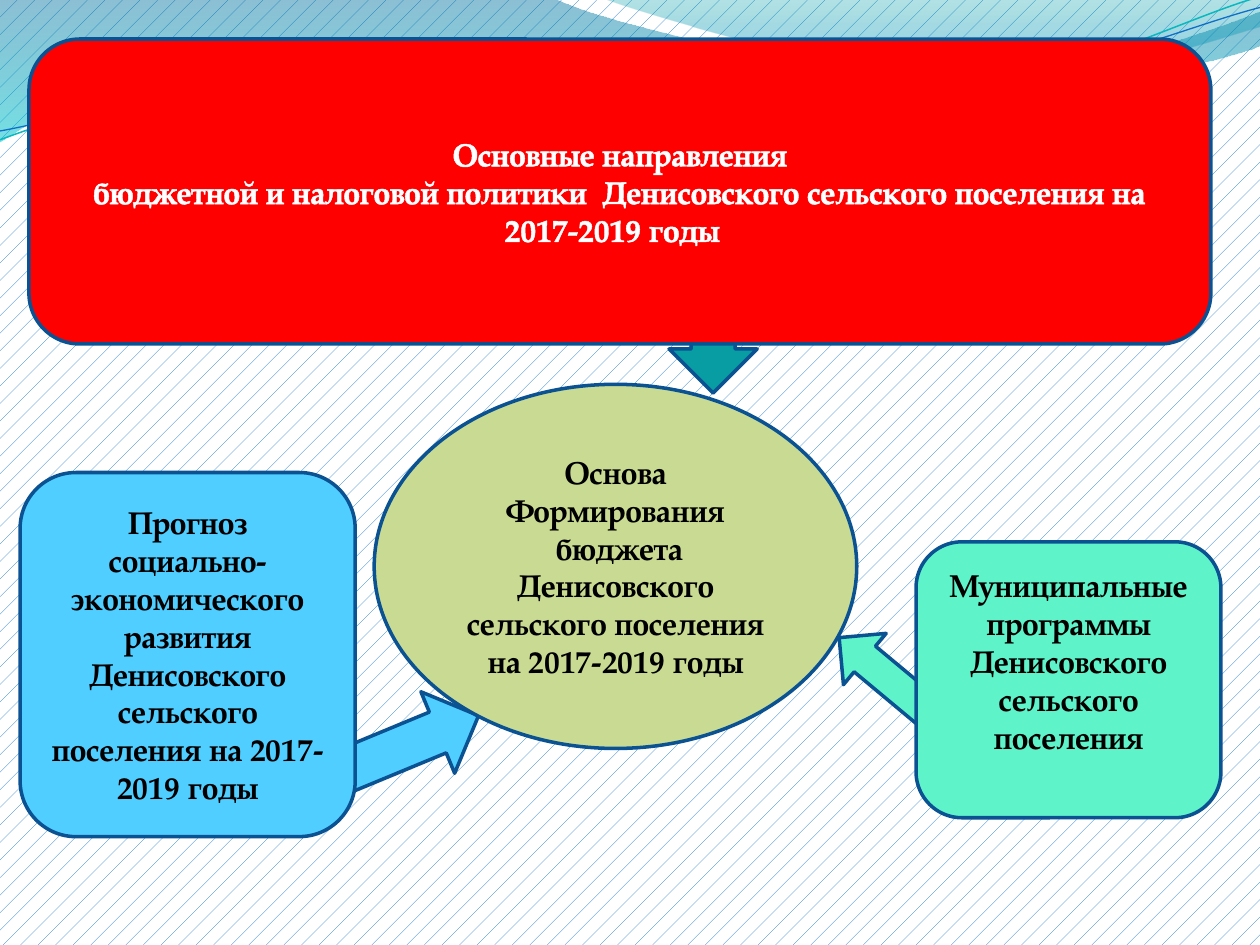
from math import cos, radians, sin

from lxml import etree
from pptx import Presentation
from pptx.dml.color import RGBColor
from pptx.enum.dml import MSO_PATTERN
from pptx.enum.shapes import MSO_SHAPE as SHAPE
from pptx.enum.text import MSO_ANCHOR, PP_ALIGN
from pptx.oxml.ns import qn
from pptx.util import Inches, Pt

FONT = "TeX Gyre Pagella"
TILT = 357.3
WHITE = RGBColor(0xFF, 0xFF, 0xFF)
BLACK = RGBColor(0, 0, 0)
RED = RGBColor(0xFF, 0, 0)
BLUE = RGBColor(0x0F, 0x6F, 0xC6)
NAVY = RGBColor(0x0B, 0x52, 0x92)
SKY = RGBColor(0x4F, 0xCE, 0xFF)
MINT = RGBColor(0x5F, 0xF3, 0xCA)
OLIVE = RGBColor(0xC9, 0xDA, 0x92)
TEAL = RGBColor(0x08, 0x9C, 0xA3)
AQUA = RGBColor(0x0A, 0xB8, 0xBF)
WAVE_TOP = RGBColor(0, 0x74, 0xA1)
WAVE_END = RGBColor(0, 0xC6, 0xCF)
CREST_TOP = RGBColor(0, 0xA1, 0xA9)
CREST_END = RGBColor(0, 0x8B, 0xBF)
EDGE_BLUE = RGBColor(0x06, 0x69, 0xC4)
EDGE_TEAL = RGBColor(0, 0x63, 0x7F)
EDGE_WHITE = RGBColor(0xFC, 0xFC, 0xFE)


def turn(point, angle):
    """Return a point turned clockwise about the origin."""
    (x, y), a = point, radians(angle)
    return x * cos(a) - y * sin(a), x * sin(a) + y * cos(a)


def level(points, angle):
    """Return points that look unchanged once their shape is rotated by the angle."""
    flat = [turn(pt, -angle) for pt in points]
    middle = [(min(axis) + max(axis)) / 2 for axis in zip(*flat)]
    dx, dy = (a - b for a, b in zip(turn(middle, angle), middle))
    return [(x + dx, y + dy) for x, y in flat]


class Deck:
    """Draws styled elements on a grid of 100 columns by 75 rows."""

    def __init__(self):
        self.prs = Presentation()
        self.prs.slide_width, self.prs.slide_height = Inches(10), Inches(7.5)
        self.s = self.prs.slides.add_slide(self.prs.slide_layouts[6])

    def emu(self, units):
        return round(units * self.prs.slide_width / 100)

    def background(self, fore, back):
        fill = self.s.background.fill
        fill.patterned()
        fill.pattern = MSO_PATTERN.PERCENT_5
        fill.fore_color.rgb, fill.back_color.rgb = fore, back

    def outline(self, parts, close):
        points = [pt for part in parts for pt in part]
        pts = [(self.emu(x), self.emu(y)) for x, y in points]
        builder = self.s.shapes.build_freeform(*pts[0], scale=1.0)
        builder.add_line_segments(pts[1:], close=close)
        sp = builder.convert_to_shape()
        sp.shadow.inherit = False
        segments = iter(list(sp._element.iter(qn("a:lnTo"))))
        for part in parts[1:]:
            steps = [next(segments) for _ in part]
            if len(part) > 1:
                curves = [steps[i:i + 3] for i in range(0, len(steps), 3)]
                for curve in curves:
                    cubic = etree.Element(qn("a:cubicBezTo"))
                    curve[0].addprevious(cubic)
                    for step in curve:
                        cubic.append(step[0])
                        step.getparent().remove(step)
        return sp

    def wave(self, parts, stops):
        sp = self.outline(parts, True)
        sp.line.fill.background()
        sp.fill.gradient()
        sp.fill.gradient_angle = 270
        for stop, (position, color, alpha) in zip(sp.fill.gradient_stops, stops):
            stop.position, stop.color.rgb = position, color
        colors = sp._element.spPr.iter(qn("a:srgbClr"))
        for clr, (_, _, alpha) in zip(colors, stops):
            etree.SubElement(clr, qn("a:alpha"), val=str(alpha * 1000))

    def ripple(self, points, color, width):
        flat = level(points, TILT)
        sp = self.outline([flat[:1], flat[1:]], False)
        sp.rotation = TILT
        sp.fill.background()
        sp.line.color.rgb, sp.line.width = color, Pt(width)

    def shape(self, kind, x, y, w, h, fill, rotation=0):
        sp = self.s.shapes.add_shape(kind, *map(self.emu, (x, y, w, h)))
        sp.shadow.inherit = False
        sp.rotation = rotation
        sp.fill.solid()
        sp.fill.fore_color.rgb = fill
        sp.line.color.rgb, sp.line.width = NAVY, Pt(2)
        return sp

    def box(self, kind, x, y, w, h, fill, lines, color=BLACK, edge=(EDGE_BLUE, 0.83), lift=0):
        tf = self.shape(kind, x, y, w, h, fill).text_frame
        tf.word_wrap = True
        tf.vertical_anchor = MSO_ANCHOR.MIDDLE
        tf.margin_bottom += self.emu(lift)
        tf.text = "\n".join(lines)
        for p in tf.paragraphs:
            p.alignment = PP_ALIGN.CENTER
            p.font.name, p.font.size, p.font.bold = FONT, Pt(18), True
            p.font.color.rgb = color
            for r in p.runs:
                self.edge(r, *edge)

    def edge(self, r, color, width):
        ln = etree.Element(qn("a:ln"), w=str(int(Pt(width))))
        solid = etree.SubElement(ln, qn("a:solidFill"))
        etree.SubElement(solid, qn("a:srgbClr"), val=str(color))
        r._r.get_or_add_rPr().insert(0, ln)


def main():
    deck = Deck()
    deck.background(BLUE, WHITE)
    deck.wave([[(0, -0.1)], [(44, -0.1)],
               [(47.6, 1.7), (66.4, 6.3), (75.8, 6.3), (85.3, 6.3), (95.8, 2.6), (100, 0.9)],
               [(100.1, 3.6)],
               [(98.3, 4.4), (87, 7.6), (74.6, 7.5), (62.2, 7.5), (38.2, 2.8), (25.7, 3.4),
                (12.9, 3.5), (4.6, 8.3), (-0.1, 11.3)]],
              [(0, WAVE_TOP, 45), (1, WAVE_END, 55)])
    deck.wave([[(47.9, -0.1)],
               [(50.9, 1.1), (68.2, 6.2), (76.9, 6.5), (85.6, 6.9), (96.1, 3.2), (100, 2.1)],
               [(100, 0)]],
              [(0, CREST_TOP, 30), (0.8, CREST_END, 45)])
    deck.ripple([(0, 11.1), (4.8, 9.3), (15.8, 5.7), (27.7, 5.2), (39.5, 4.7),
                 (59.3, 8.9), (71.3, 8), (83.3, 7.1), (93.8, 1.5), (99.8, -0.2)], AQUA, 0.85)
    deck.ripple([(0, 10.4), (4.7, 9.6), (16.4, 6.1), (28.3, 5.6), (40.3, 5.1),
                 (59.7, 8.3), (71.7, 7.5), (83.6, 6.7), (94.1, 2.1), (100, 0.6)], BLUE, 0.75)

    deck.shape(SHAPE.RIGHT_ARROW, 24.9, 55.9, 13.6, 7, SKY, 337.5)
    deck.shape(SHAPE.DOWN_ARROW, 53.1, 24.2, 7, 7, TEAL)
    deck.shape(SHAPE.LEFT_ARROW, 65.5, 51, 9.5, 5.3, MINT, 39.8)
    deck.box(SHAPE.OVAL, 29.7, 30.5, 38.3, 28.9, OLIVE,
             ["Основа", "Формирования", " бюджета",
              "Денисовского сельского поселения", "на 2017-2019 годы"])
    deck.box(SHAPE.ROUNDED_RECTANGLE, 72.7, 43, 24.2, 21.9, MINT,
             ["Муниципальные программы", "Денисовского", "сельского поселения"],
             edge=(EDGE_TEAL, 1), lift=3)
    deck.box(SHAPE.ROUNDED_RECTANGLE, 2.3, 3.1, 93.8, 24.2, RED,
             ["Основные направления",
              "бюджетной и налоговой политики  Денисовского сельского поселения на 2017-2019 годы  "],
             WHITE, (EDGE_WHITE, 1.4))
    deck.box(SHAPE.ROUNDED_RECTANGLE, 1.6, 37.5, 26.6, 28.9, SKY,
             ["Прогноз социально-экономического развития Денисовского сельского поселения "
              "на 2017-2019 годы"])
    deck.prs.save("out.pptx")


if __name__ == "__main__":
    main()
